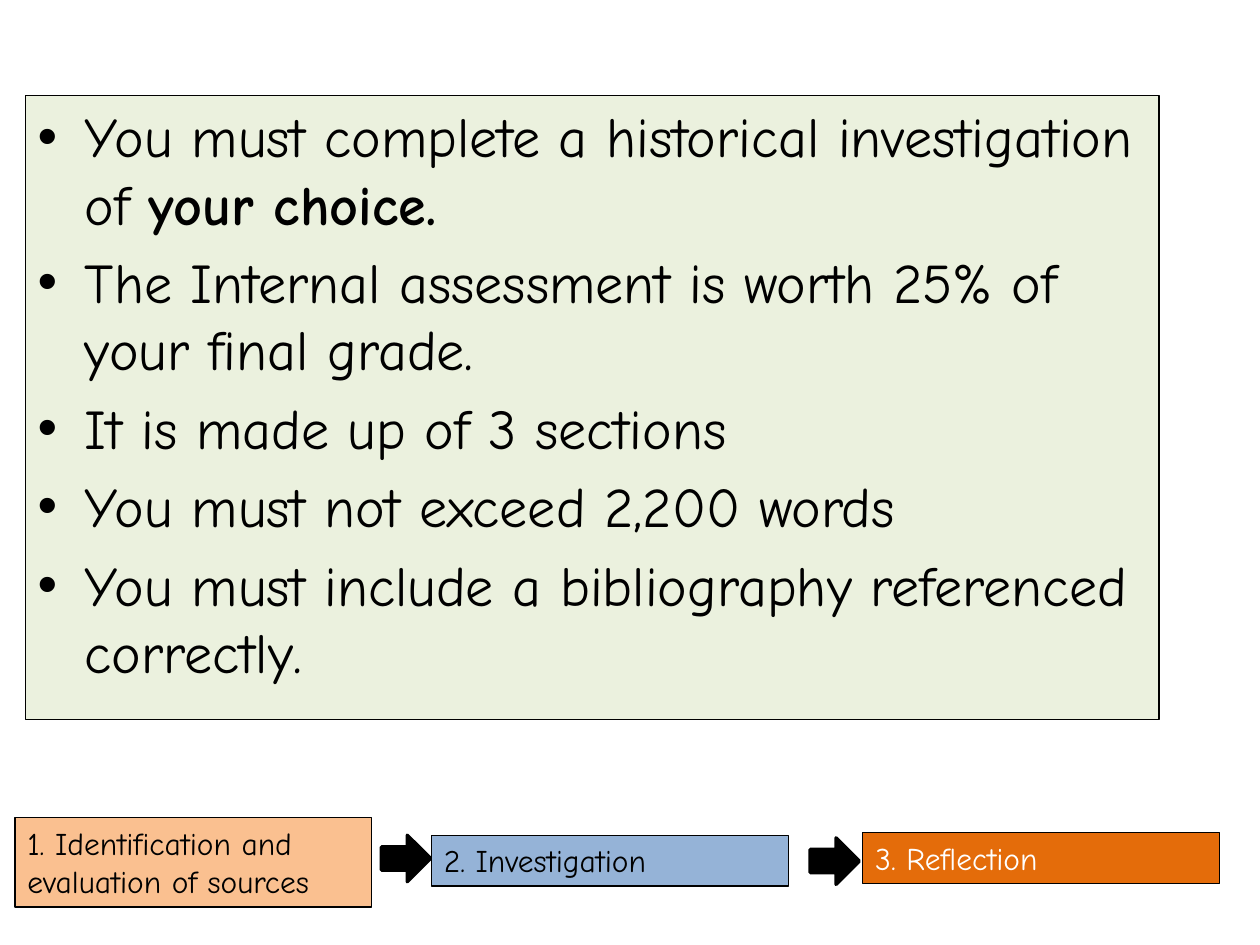
from lxml import etree
from pptx import Presentation
from pptx.dml.color import RGBColor
from pptx.enum import shapes, text
from pptx.oxml import ns
from pptx.util import Pt

BLACK = RGBColor(0x00, 0x00, 0x00)
WHITE = RGBColor(0xFF, 0xFF, 0xFF)
PALE_GREEN = RGBColor(0xEB, 0xF1, 0xDE)
PEACH = RGBColor(0xFA, 0xC0, 0x90)
BLUE = RGBColor(0x95, 0xB3, 0xD7)
ORANGE = RGBColor(0xE4, 0x6C, 0x0A)
FONT = "Comic Neue"

# Each requirement is a list of (wording, bold) runs
REQUIREMENTS = [
    [("You must complete a historical investigation of ", False),
     ("your choice.", True)],
    [("The Internal assessment is worth 25% of your final grade.", False)],
    [("It is made up of 3 sections", False)],
    [("You must not exceed 2,200 words", False)],
    [("You must include a bibliography referenced correctly.", False)],
]

# Section: wording, left, top, height, fill, text colour
SECTION_WIDTH = 204
SECTIONS = [
    ("1. Identification and evaluation of sources", 0, 0, 51, PEACH, BLACK),
    ("2. Investigation", 238, 10, 29, BLUE, BLACK),
    ("3. Reflection", 484.5, 8.5, 29, ORANGE, WHITE),
]
ARROWS = [(209.5, 10), (454.5, 11.5)]
ARROW_SIZE = (28, 26.5)


def add_block(slide, kind, box, fill, line_width):
    block = slide.shapes.add_shape(kind, *(Pt(length) for length in box))
    block.shadow.inherit = False
    block.fill.solid()
    block.fill.fore_color.rgb = fill
    block.line.color.rgb = BLACK
    block.line.width = Pt(line_width)
    return block


def add_wording(paragraph, wording, size, color, bold=False):
    paragraph.alignment = text.PP_ALIGN.LEFT
    run = paragraph.add_run()
    run.text = wording
    run.font.name = FONT
    run.font.size = Pt(size)
    run.font.bold = bold
    run.font.color.rgb = color


def add_bullet(paragraph, indent):
    properties = paragraph._p.get_or_add_pPr()
    properties.set("marL", str(Pt(indent)))
    properties.set("indent", str(-Pt(indent)))
    typeface = etree.SubElement(properties, ns.qn("a:buFont"))
    typeface.set("typeface", "Arial")
    bullet = etree.SubElement(properties, ns.qn("a:buChar"))
    bullet.set("char", "•")


def build_requirements(slide, box):
    panel = add_block(slide, shapes.MSO_SHAPE.RECTANGLE, box, PALE_GREEN, 0.75)
    frame = panel.text_frame
    frame.word_wrap = True
    frame.vertical_anchor = text.MSO_ANCHOR.TOP
    for index, requirement in enumerate(REQUIREMENTS):
        paragraph = frame.add_paragraph() if index else frame.paragraphs[0]
        paragraph.space_before = Pt(6.4)
        add_bullet(paragraph, 27)
        for wording, bold in requirement:
            add_wording(paragraph, wording, 32, BLACK, bold)


def build_sections(slide, left, top):
    # Section boxes
    for wording, x, y, height, fill, color in SECTIONS:
        box = (left + x, top + y, SECTION_WIDTH, height)
        section = add_block(slide, shapes.MSO_SHAPE.RECTANGLE, box, fill, 0.75)
        frame = section.text_frame
        frame.word_wrap = True
        frame.auto_size = text.MSO_AUTO_SIZE.SHAPE_TO_FIT_TEXT
        frame.vertical_anchor = text.MSO_ANCHOR.TOP
        add_wording(frame.paragraphs[0], wording, 18, color)

    # Arrows between the sections
    for x, y in ARROWS:
        box = (left + x, top + y, *ARROW_SIZE)
        add_block(slide, shapes.MSO_SHAPE.RIGHT_ARROW, box, BLACK, 2)


def main():
    deck = Presentation()
    deck.slide_width, deck.slide_height = Pt(720), Pt(540)
    slide = deck.slides.add_slide(deck.slide_layouts[6])
    build_requirements(slide, (14.4, 54.7, 648, 356.4))
    build_sections(slide, 8.5, 467.3)
    deck.save("out.pptx")


if __name__ == "__main__":
    main()
